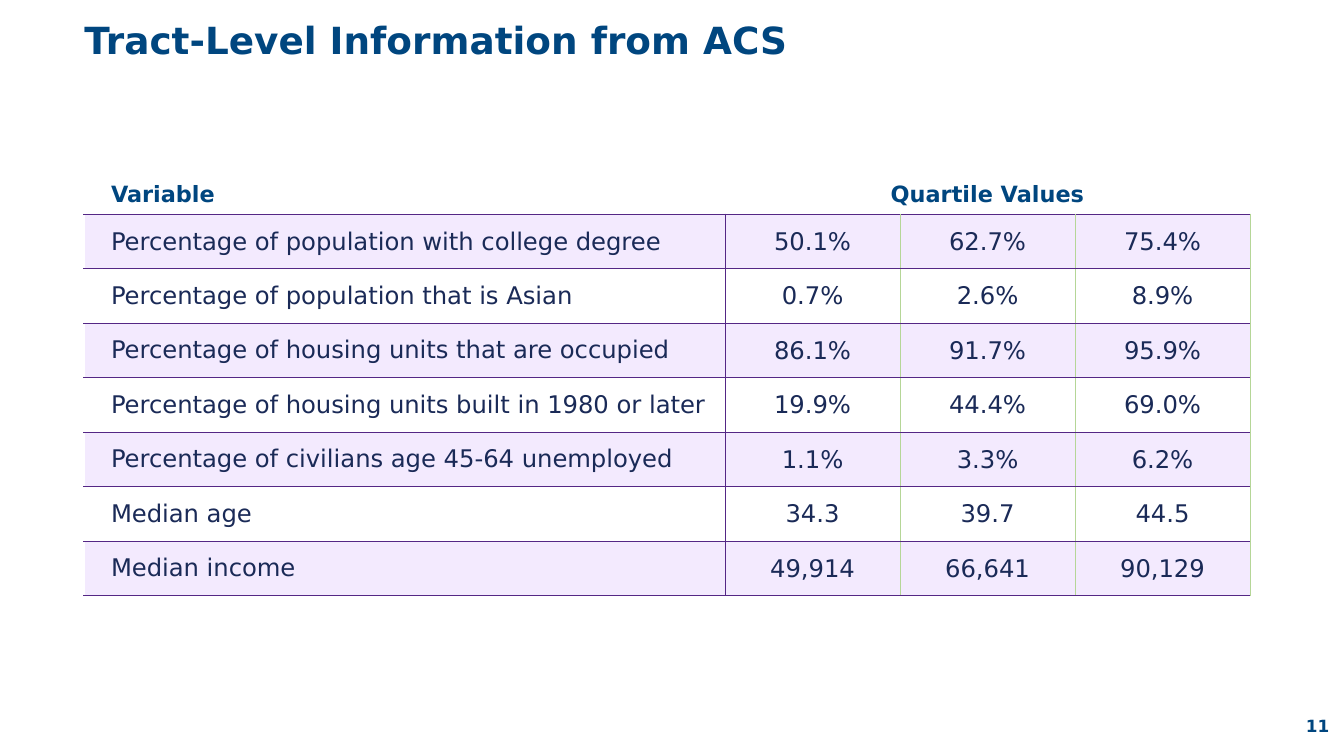
from lxml import etree
from pptx import Presentation
from pptx import util as u
from pptx.dml.color import RGBColor
from pptx.enum import text
from pptx.oxml import ns

TITLE = "Tract-Level Information from ACS"
PAGE_NUMBER = "11"
HEADER = ("Variable", "Quartile Values")
ROWS = [
    ("Percentage of population with college degree", "50.1%", "62.7%", "75.4%"),
    ("Percentage of population that is Asian", "0.7%", "2.6%", "8.9%"),
    ("Percentage of housing units that are occupied", "86.1%", "91.7%", "95.9%"),
    ("Percentage of housing units built in 1980 or later", "19.9%", "44.4%", "69.0%"),
    ("Percentage of civilians age 45-64 unemployed", "1.1%", "3.3%", "6.2%"),
    ("Median age", "34.3", "39.7", "44.5"),
    ("Median income", "49,914", "66,641", "90,129"),
]
COLUMNS = (641, 175, 175, 175)
TABLE_HEIGHT = 436

FONT = "DejaVu Sans"
BLUE, NAVY, PURPLE = "00467F", "1A2A57", "542785"
GREEN, LILAC, WHITE = "B5D697", "F3EAFE", "FFFFFF"


def px(length):
    return u.Emu(round(length * 914400 / 134.4))


def rgb(value):
    return RGBColor.from_string(value)


def write(frame, words, size, color, bold=False, align=text.PP_ALIGN.LEFT):
    para = frame.paragraphs[0]
    para.text = words
    para.alignment = align
    para.font.name = FONT
    para.font.size = u.Pt(size)
    para.font.bold = bold
    para.font.color.rgb = rgb(color)
    return para


def place(shape, left, top, width, height):
    shape.left, shape.top = px(left), px(top)
    shape.width, shape.height = px(width), px(height)


def set_borders(cell, borders):
    properties = cell._tc.get_or_add_tcPr()
    for side, (color, width) in zip("LRTB", borders):
        line = etree.SubElement(properties, ns.qn(f"a:ln{side}"), w=str(u.Pt(width)))
        fill = etree.SubElement(line, ns.qn("a:solidFill"))
        etree.SubElement(fill, ns.qn("a:srgbClr"), val=color)


def set_margins(cell, left, top, right, bottom):
    cell.margin_left, cell.margin_top = px(left), px(top)
    cell.margin_right, cell.margin_bottom = px(right), px(bottom)


def borders_of(row, column):
    if row == 0:
        return (WHITE, 1), (WHITE, 1), (WHITE, 1), (PURPLE, 1)
    left = [(WHITE, 1), (PURPLE, 0.5), (GREEN, 0.5), (GREEN, 0.5)][column]
    right = (PURPLE if column == 0 else GREEN, 0.5)
    top = (PURPLE, 1 if row == 1 else 0.5)
    return left, right, top, (PURPLE, 0.5)


def add_quartile_table(page):
    count = len(ROWS) + 1
    table = page.shapes.add_table(
        count, len(COLUMNS), px(84), px(160), px(sum(COLUMNS)), px(TABLE_HEIGHT)
    ).table
    table.first_row = table.horz_banding = False
    for column, width in zip(table.columns, COLUMNS):
        column.width = px(width)
    for row in table.rows:
        row.height = px(TABLE_HEIGHT / count)
    table.cell(0, 1).merge(table.cell(0, len(COLUMNS) - 1))

    for r, values in enumerate([HEADER, *ROWS]):
        for c in range(len(COLUMNS)):
            cell = table.cell(r, c)
            set_borders(cell, borders_of(r, c))
            cell.fill.solid()
            cell.fill.fore_color.rgb = rgb(LILAC if r % 2 else WHITE)
            cell.vertical_anchor = text.MSO_ANCHOR.MIDDLE if r else text.MSO_ANCHOR.BOTTOM
            if c == 0:
                set_margins(cell, 27, 7, 13, 7)
            elif r:
                set_margins(cell, 1, 1, 1, 0)
            if c < len(values):
                align = text.PP_ALIGN.CENTER if c else text.PP_ALIGN.LEFT
                size, color = (13, NAVY) if r else (12, BLUE)
                write(cell.text_frame, values[c], size, color, r == 0, align)


deck = Presentation()
deck.slide_width, deck.slide_height = px(1344), px(756)
page = deck.slides.add_slide(deck.slide_layouts[5])

title = page.shapes.title
place(title, 71, 0, 1232, 85)
title.text_frame.vertical_anchor = text.MSO_ANCHOR.MIDDLE
write(title.text_frame, TITLE, 20, BLUE, True).line_spacing = 0.9

number = page.shapes.add_textbox(px(1306), px(706), px(47), px(40))
number.text_frame.word_wrap = True
number.text_frame.margin_left = 0
number.text_frame.vertical_anchor = text.MSO_ANCHOR.MIDDLE
write(number.text_frame, PAGE_NUMBER, 9, BLUE, True)

add_quartile_table(page)
deck.save("out.pptx")
